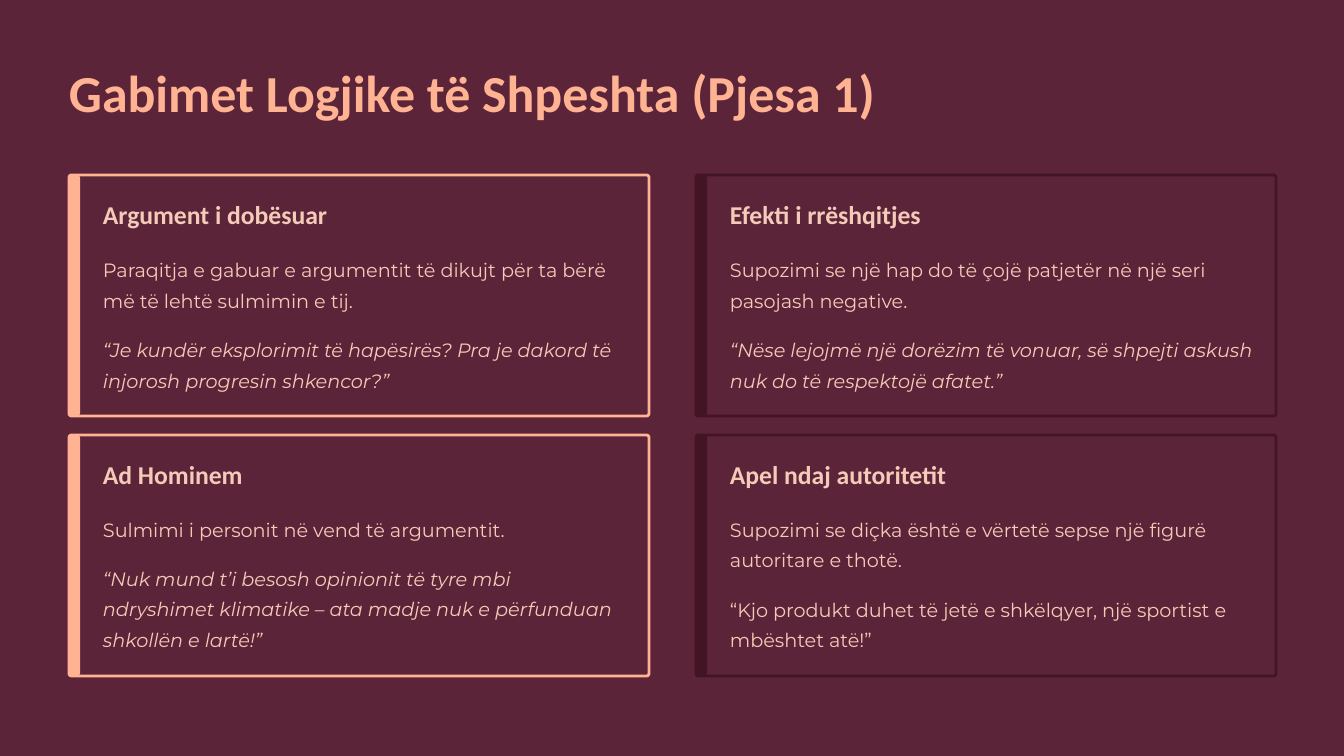
from pptx import Presentation
from pptx.dml.color import RGBColor
from pptx.enum.shapes import MSO_SHAPE
from pptx.util import Pt

PX = 914400 // 84
COLORS = {"plum": "5C2438", "peach": "FFB393", "dark": "421424", "blush": "F4CAB8"}

CARD_W, CARD_H = 580, 241
LEFT, TOP = 69, 175
COLUMN_STEP, ROW_STEP = 627, 260
BAR_W = 11
TEXT_INSET, TEXT_W = 34, 523
LINE_H, EXAMPLE_GAP = 31, 18

# column, row, accent, heading, definition, its line count, example, its line count, italic
FALLACIES = [
    (0, 0, "peach", "Argument i dobësuar",
     "Paraqitja e gabuar e argumentit të dikujt për ta bërë më të lehtë sulmimin e tij.", 2,
     "“Je kundër eksplorimit të hapësirës? Pra je dakord të injorosh progresin shkencor?”", 2, True),
    (0, 1, "peach", "Ad Hominem",
     "Sulmimi i personit në vend të argumentit.", 1,
     "“Nuk mund t’i besosh opinionit të tyre mbi ndryshimet klimatike – ata madje nuk e "
     "përfunduan shkollën e lartë!”", 3, True),
    (1, 0, "dark", "Efekti i rrëshqitjes",
     "Supozimi se një hap do të çojë patjetër në një seri pasojash negative.", 2,
     "“Nëse lejojmë një dorëzim të vonuar, së shpejti askush nuk do të respektojë afatet.”", 2, True),
    (1, 1, "dark", "Apel ndaj autoritetit",
     "Supozimi se diçka është e vërtetë sepse një figurë autoritare e thotë.", 2,
     "“Kjo produkt duhet të jetë e shkëlqyer, një sportist e mbështet atë!”", 2, False),
]

prs = Presentation()
prs.slide_width, prs.slide_height = 1344 * PX, 756 * PX
slide = prs.slides.add_slide(prs.slide_layouts[6])
slide.background.fill.solid()
slide.background.fill.fore_color.rgb = RGBColor.from_string(COLORS["plum"])


def add_text(x, y, w, h, text, size, leading, font="Montserrat", color="blush",
             bold=False, italic=False):
    box = slide.shapes.add_textbox(x * PX, y * PX, w * PX, h * PX)
    frame = box.text_frame
    frame.word_wrap = True
    frame.margin_left = frame.margin_top = frame.margin_right = frame.margin_bottom = 0
    paragraph = frame.paragraphs[0]
    paragraph.text = text
    paragraph.line_spacing = Pt(leading)
    paragraph.font.name = font
    paragraph.font.size = Pt(size)
    paragraph.font.bold = bold
    paragraph.font.italic = italic
    paragraph.font.color.rgb = RGBColor.from_string(COLORS[color])


def add_panel(x, y, w, rounding, fill, line=None):
    """Add a rounded rectangle of card height, outlined only if a line colour is given."""
    panel = slide.shapes.add_shape(MSO_SHAPE.ROUNDED_RECTANGLE, x * PX, y * PX, w * PX, CARD_H * PX)
    panel.adjustments[0] = rounding
    panel.shadow.inherit = False
    panel.fill.solid()
    panel.fill.fore_color.rgb = RGBColor.from_string(COLORS[fill])
    if line:
        panel.line.color.rgb = RGBColor.from_string(COLORS[line])
        panel.line.width = Pt(2.4)
    else:
        panel.line.fill.background()


add_text(LEFT, 58, 839, 66, "Gabimet Logjike të Shpeshta (Pjesa 1)", 44.5, 56, "Calibri", "peach", bold=True)

for (column, row, accent, heading, definition, definition_lines,
     example, example_lines, italic) in FALLACIES:
    x, y = LEFT + column * COLUMN_STEP, TOP + row * ROW_STEP
    add_panel(x, y, CARD_W, 0.01, "plum", accent)
    add_panel(x, y, BAR_W, 0.26, accent)

    text_x = x + TEXT_INSET
    definition_y = y + 75
    example_y = definition_y + definition_lines * LINE_H + EXAMPLE_GAP
    add_text(text_x, y + 22, 262, 33, heading, 22, 28, "Calibri", bold=True)
    add_text(text_x, definition_y, TEXT_W, definition_lines * LINE_H, definition, 16.5, 26.5)
    add_text(text_x, example_y, TEXT_W, example_lines * LINE_H, example, 16.5, 26.5, italic=italic)

prs.save("out.pptx")
